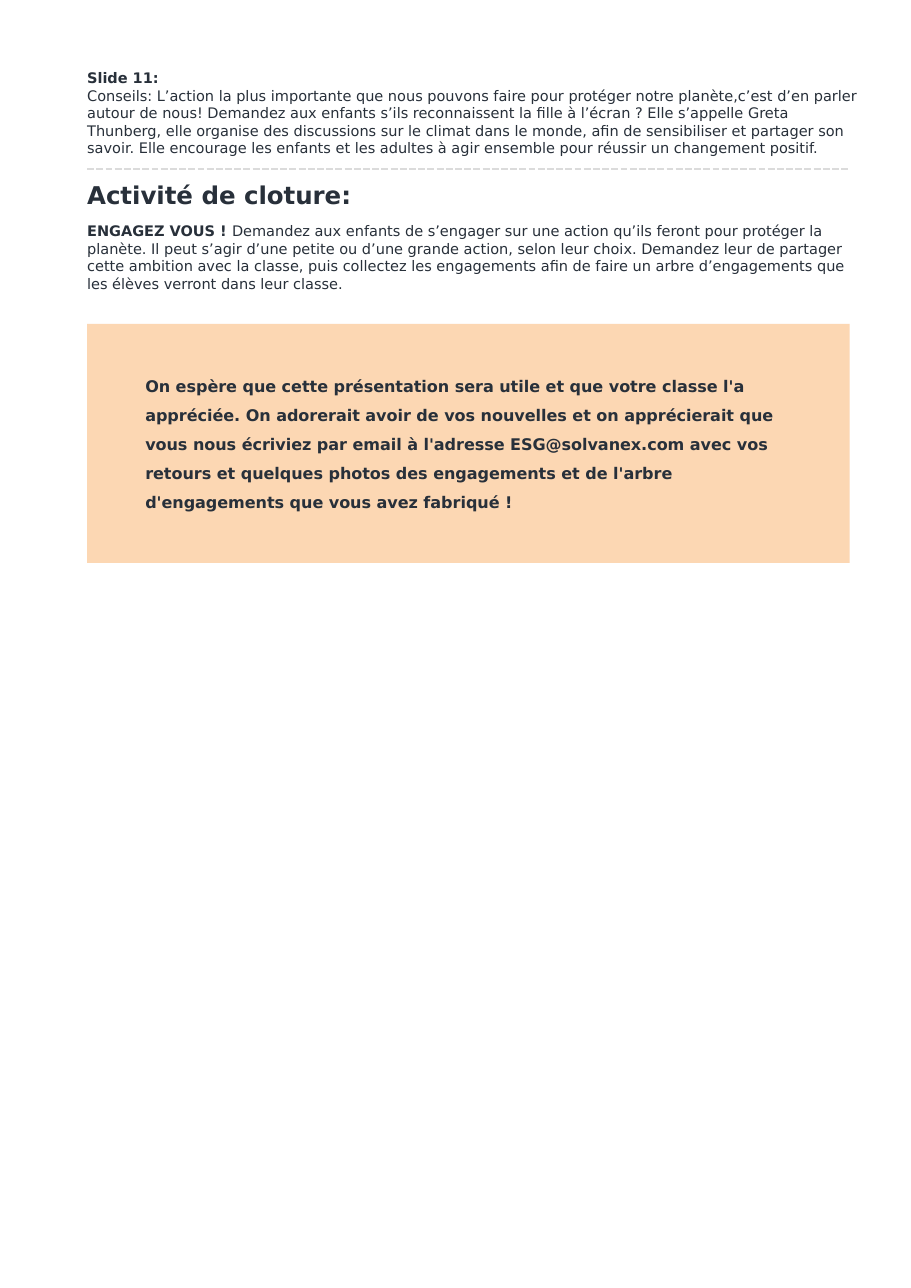
import pptx
import pptx.dml.color
import pptx.enum.dml
import pptx.enum.shapes
import pptx.oxml
import pptx.util
from pptx.util import Cm

COLORS = {"text": "28303A", "panel": "FCD7B3", "divider": "DBDBDB"}
LEFT, CONTENT_WIDTH = 2.01, 17.58


class GuidePage:
    """Hold the style and current slide, and draw each kind of element."""

    font_name = "DejaVu Sans"

    def __init__(self, presentation):
        self.slide = presentation.slides.add_slide(presentation.slide_layouts[6])

    def color(self, name):
        return pptx.dml.color.RGBColor.from_string(COLORS[name])

    def text(self, left, top, width, height, paragraphs, size, spacing=None, margins=(0, 0, 0, 0)):
        box = self.slide.shapes.add_textbox(Cm(left), Cm(top), Cm(width), Cm(height))
        frame = box.text_frame
        frame.word_wrap = True
        frame.margin_left, frame.margin_top, frame.margin_right, frame.margin_bottom = map(Cm, margins)
        for index, runs in enumerate(paragraphs):
            paragraph = frame.paragraphs[0] if index == 0 else frame.add_paragraph()
            paragraph.line_spacing = spacing
            paragraph.font.name = self.font_name
            paragraph.font.size = pptx.util.Pt(size)
            paragraph.font.color.rgb = self.color("text")
            if len(runs) == 1:
                paragraph.font.bold = runs[0][1]
            for content, bold in runs:
                run = paragraph.add_run()
                run.text = content
                if len(runs) > 1:
                    run.font.bold = bold

    def panel(self, left, top, width, height):
        shape = self.slide.shapes.add_shape(
            pptx.enum.shapes.MSO_SHAPE.RECTANGLE, Cm(left), Cm(top), Cm(width), Cm(height))
        shape.shadow.inherit = False
        shape.fill.solid()
        shape.fill.fore_color.rgb = self.color("panel")
        shape.line.fill.background()

    def divider(self, left, top, width):
        connector = self.slide.shapes.add_connector(
            pptx.enum.shapes.MSO_CONNECTOR.STRAIGHT, Cm(left), Cm(top), Cm(left + width), Cm(top))
        connector.line.color.rgb = self.color("divider")
        connector.line.width = pptx.util.Pt(1.5)
        connector.line.dash_style = pptx.enum.dml.MSO_LINE.SQUARE_DOT
        properties = connector._element.spPr
        properties.append(properties.makeelement(pptx.oxml.ns.qn("a:effectLst"), {}))


def main():
    presentation = pptx.Presentation()
    presentation.slide_width = Cm(21)
    presentation.slide_height = Cm(29.7)
    page = GuidePage(presentation)

    page.text(LEFT, 5.13, CONTENT_WIDTH, 1.35, [[
        ("ENGAGEZ VOUS ! ", True),
        ("Demandez aux enfants de s’engager sur une action qu’ils feront pour protéger la planète. "
         "Il peut s’agir d’une petite ou d’une grande action, selon leur choix. Demandez leur de "
         "partager cette ambition avec la classe, puis collectez les engagements afin de faire un "
         "arbre d’engagements que les élèves verront dans leur classe.", False),
    ]], 9.5)
    page.text(LEFT, 4.11, 7.14, 0.76, [[("Activité de cloture:", True)]], 16, 0.9,
              (0, 0.13, 0.25, 0.13))

    page.panel(LEFT, 7.47, CONTENT_WIDTH, 5.51)
    page.text(3.35, 8.46, 15.24, 2.92, [[
        ("On espère que cette présentation sera utile et que votre classe l'a appréciée. On "
         "adorerait avoir de vos nouvelles et on apprécierait que vous nous écriviez par email à "
         "l'adresse ESG@solvanex.com avec vos retours et quelques photos des engagements et de "
         "l'arbre d'engagements que vous avez fabriqué !", True),
    ]], 10.5, 1.5)

    page.text(LEFT, 1.6, 17.91, 2.21, [
        [("Slide 11:", True)],
        [("Conseils: L’action la plus importante que nous pouvons faire pour protéger notre "
          "planète,c’est d’en parler autour de nous! Demandez aux enfants s’ils reconnaissent la "
          "fille à l’écran ? Elle s’appelle Greta Thunberg, elle organise des discussions sur le "
          "climat dans le monde, afin de sensibiliser et partager son savoir. Elle encourage les "
          "enfants et les adultes à agir ensemble pour réussir un changement positif.", False)],
    ], 9.5, pptx.util.Pt(11.4))
    page.divider(LEFT, 3.89, CONTENT_WIDTH)

    presentation.save("out.pptx")


if __name__ == "__main__":
    main()
